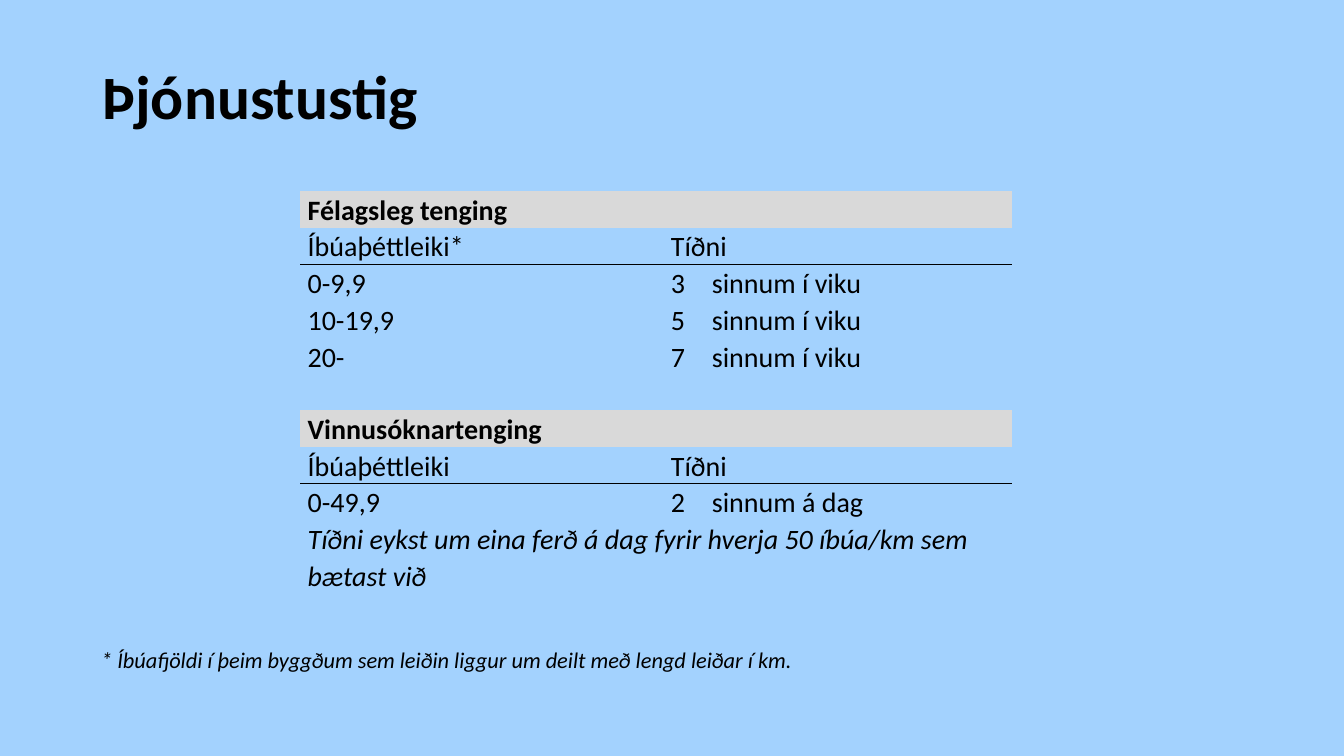
from dataclasses import dataclass

from lxml.etree import SubElement
from pptx import Presentation
from pptx.dml.color import RGBColor
from pptx.enum.text import MSO_ANCHOR as Anchor, PP_ALIGN as Align
from pptx.oxml.ns import qn
from pptx.util import Pt

PX = 9525  # EMU per px, 96 px to the inch
COLORS = {"background": "A3D2FE", "band": "D9D9D9", "ink": "000000"}
FONT = "Calibri"
COLUMN_WIDTHS = (346, 39, 68, 107, 118)
ROW_HEIGHT = 34


@dataclass(frozen=True)
class Row:
    texts: tuple[str, ...]
    spans: tuple[int, ...]
    bold: bool = False
    italic: bool = False
    band: bool = False
    rule_above: bool = False
    rule_below: bool = False
    anchor: Anchor = Anchor.BOTTOM
    lines: int = 1


def px(length: int) -> int:
    return length * PX


def color(name: str) -> RGBColor:
    return RGBColor.from_string(COLORS[name])


def style(paragraph, size: int, bold: bool = False, italic: bool = False) -> None:
    font = paragraph.font
    font.name, font.size, font.bold, font.italic = FONT, Pt(size), bold, italic
    font.color.rgb = color("ink")


def section(heading: str, density: str, levels: list[tuple[str, str, str]]) -> list[Row]:
    """Band, column headings and the frequency for each density level."""
    return [
        Row((heading,), (5,), bold=True, band=True, anchor=Anchor.TOP),
        Row((density, "Tíðni"), (1, 4), rule_below=True, anchor=Anchor.TOP),
        *(Row(level, (1, 1, 3), rule_above=index == 0) for index, level in enumerate(levels)),
    ]


def set_borders(cell, row: Row) -> None:
    ruled = {"lnT": row.rule_above, "lnB": row.rule_below}
    for side in ("lnL", "lnR", "lnT", "lnB"):
        line = SubElement(cell._tc.get_or_add_tcPr(), qn(f"a:{side}"), w=str(Pt(1)))
        if ruled.get(side):
            fill = SubElement(line, qn("a:solidFill"))
            SubElement(fill, qn("a:srgbClr"), val=COLORS["ink"])
        else:
            SubElement(line, qn("a:noFill"))


def fill_row(table, index: int, row: Row) -> None:
    table.rows[index].height = px(ROW_HEIGHT * row.lines)
    for column in range(len(COLUMN_WIDTHS)):
        cell = table.cell(index, column)
        cell.margin_left = cell.margin_right = px(7)
        cell.margin_top = cell.margin_bottom = 0
        cell.vertical_anchor = row.anchor
        set_borders(cell, row)
        if row.band:
            cell.fill.solid()
            cell.fill.fore_color.rgb = color("band")
        else:
            cell.fill.background()

    column = 0
    for text, span in zip(row.texts, row.spans):
        cell = table.cell(index, column)
        if span > 1:
            cell.merge(table.cell(index, column + span - 1))
        if text:
            cell.text = text
        paragraph = cell.text_frame.paragraphs[0]
        paragraph.line_spacing = 1.07
        style(paragraph, 20, row.bold, row.italic)
        column += span


def add_service_table(slide, rows: list[Row]) -> None:
    height = ROW_HEIGHT * sum(row.lines for row in rows)
    table = slide.shapes.add_table(
        len(rows), len(COLUMN_WIDTHS),
        px(286), px(182), px(sum(COLUMN_WIDTHS)), px(height),
    ).table
    table.first_row = table.horz_banding = False
    for column, width in zip(table.columns, COLUMN_WIDTHS):
        column.width = px(width)
    for index, row in enumerate(rows):
        fill_row(table, index, row)


def main() -> None:
    presentation = Presentation()
    presentation.slide_width, presentation.slide_height = px(1280), px(720)
    slide = presentation.slides.add_slide(presentation.slide_layouts[5])
    slide.background.fill.solid()
    slide.background.fill.fore_color.rgb = color("background")

    # Title
    title = slide.shapes.title
    title.left, title.top, title.width, title.height = map(px, (88, 38, 1104, 113))
    title.text_frame.text = "Þjónustustig"
    title.text_frame.vertical_anchor = Anchor.MIDDLE
    heading = title.text_frame.paragraphs[0]
    heading.alignment = Align.LEFT
    heading.line_spacing = 0.9
    style(heading, 44, bold=True)

    # Service levels
    per_week = "sinnum í viku"
    social = section("Félagsleg tenging", "Íbúaþéttleiki*", [
        ("0-9,9", "3", per_week),
        ("10-19,9", "5", per_week),
        ("20-", "7", per_week),
    ])
    commuting = section("Vinnusóknartenging", "Íbúaþéttleiki", [
        ("0-49,9", "2", "sinnum á dag"),
    ])
    increase = Row(
        ("Tíðni eykst um eina ferð á dag fyrir hverja 50 íbúa/km sem bætast við",),
        (5,), italic=True, lines=2,
    )
    gap = Row(("", "", "", ""), (1, 2, 1, 1))
    closing = Row(("",), (5,))
    add_service_table(slide, [*social, gap, *commuting, increase, closing])

    # Footnote
    footnote = slide.shapes.add_textbox(px(87), px(611), px(1130), px(36)).text_frame
    footnote.word_wrap = True
    footnote.text = "* Íbúafjöldi í þeim byggðum sem leiðin liggur um deilt með lengd leiðar í km."
    style(footnote.paragraphs[0], 16, italic=True)

    presentation.save("out.pptx")


if __name__ == "__main__":
    main()
